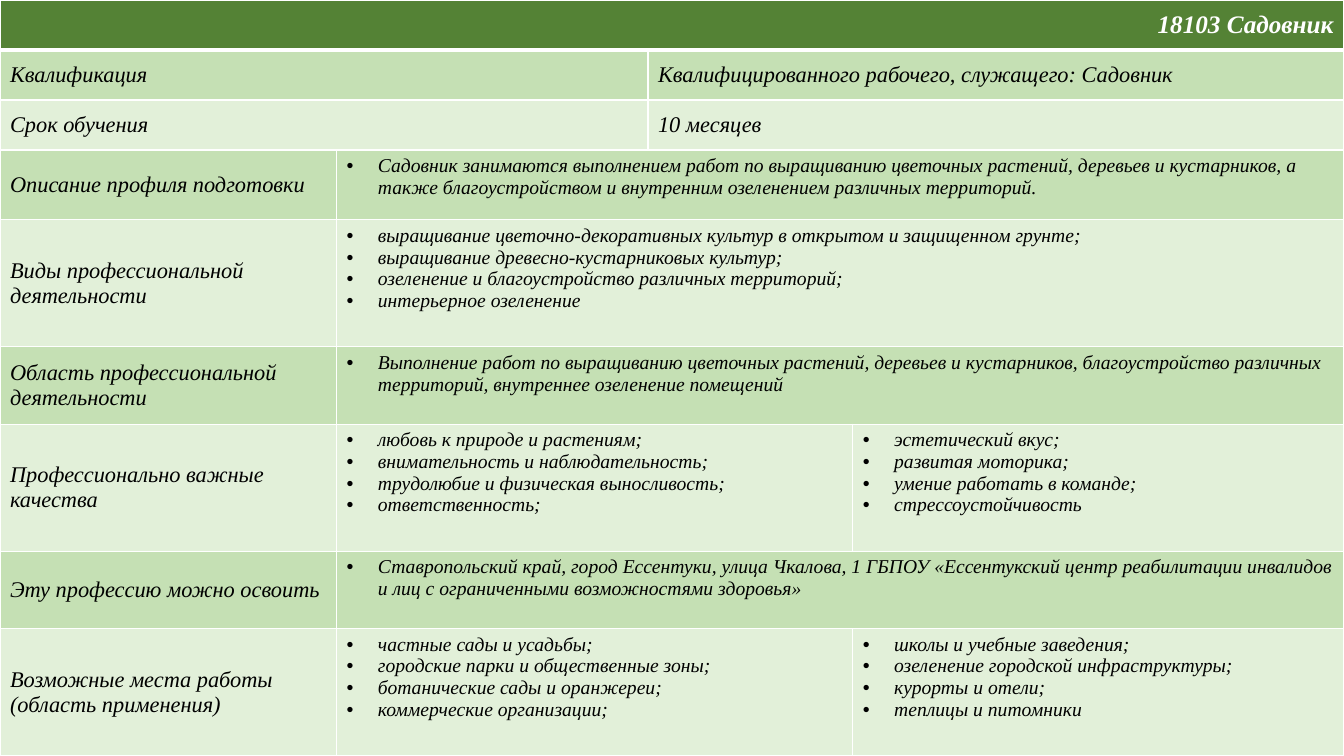
import pptx
import pptx.util
import pptx.dml.color
import pptx.enum.text
from lxml import etree
from pptx.util import Cm, Pt

FONT = "Times New Roman"
HEADER, DARK, LIGHT = "548235", "C5E0B4", "E2F0D9"
WHITE, BLACK = "FFFFFF", "000000"
COLS = [8.48, 7.85, 5.16, 12.37]
ROWS = [1.26, 1.26, 1.26, 1.76, 3.2, 1.95, 3.2, 1.95, 3.2]
INDENT = 0.79

# Each row maps its starting columns to a label (string) or a bulleted list.
CONTENT = [
    {0: "18103 Садовник"},
    {0: "Квалификация", 2: "Квалифицированного рабочего, служащего: Садовник"},
    {0: "Срок обучения", 2: "10 месяцев"},
    {0: "Описание профиля подготовки",
     1: ["Садовник занимаются выполнением работ по выращиванию цветочных растений, "
         "деревьев и кустарников, а также благоустройством и внутренним озеленением "
         "различных территорий."]},
    {0: "Виды профессиональной деятельности",
     1: ["выращивание цветочно-декоративных культур в открытом и защищенном грунте;",
         "выращивание древесно-кустарниковых культур;",
         "озеленение и благоустройство различных территорий;",
         "интерьерное озеленение"]},
    {0: "Область профессиональной деятельности",
     1: ["Выполнение работ по выращиванию цветочных растений, деревьев и кустарников, "
         "благоустройство различных территорий, внутреннее озеленение помещений"]},
    {0: "Профессионально важные качества",
     1: ["любовь к природе и растениям;", "внимательность и наблюдательность;",
         "трудолюбие и физическая выносливость;", "ответственность;"],
     3: ["эстетический вкус;", "развитая моторика;",
         "умение работать в команде;", "стрессоустойчивость"]},
    {0: "Эту профессию можно освоить",
     1: ["Ставропольский край, город Ессентуки, улица Чкалова, 1 ГБПОУ «Ессентукский "
         "центр реабилитации инвалидов и лиц с ограниченными возможностями здоровья»"]},
    {0: "Возможные места работы (область применения)",
     1: ["частные сады и усадьбы;", "городские парки и общественные зоны;",
         "ботанические сады и оранжереи;", "коммерческие организации;"],
     3: ["школы и учебные заведения;", "озеленение городской инфраструктуры;",
         "курорты и отели;", "теплицы и питомники"]},
]


def rgb(value):
    return pptx.dml.color.RGBColor.from_string(value)


def sub(parent, tag, **attrs):
    """Append a DrawingML element."""
    return etree.SubElement(parent, pptx.oxml.ns.qn("a:" + tag), **attrs)


def paint(cell, row):
    """Draw the cell borders, then its fill, in schema order."""
    tcPr = cell._tc.get_or_add_tcPr()
    for side in "LRTB":
        thick = (row, side) in ((0, "B"), (1, "T"))
        ln = sub(tcPr, "ln" + side, w=str(Pt(3 if thick else 1)))
        sub(sub(ln, "solidFill"), "srgbClr", val=WHITE)
    cell.fill.solid()
    color = HEADER if row == 0 else DARK if row % 2 else LIGHT
    cell.fill.fore_color.rgb = rgb(color)


def write(cell, content, header):
    bulleted = isinstance(content, list)
    if not bulleted:
        cell.vertical_anchor = pptx.enum.text.MSO_ANCHOR.MIDDLE
    tf = cell.text_frame
    for i, text in enumerate(content if bulleted else [content]):
        p = tf.add_paragraph() if i else tf.paragraphs[0]
        if bulleted:
            pPr = p._p.get_or_add_pPr()
            pPr.set("marL", str(Cm(INDENT)))
            pPr.set("indent", str(-Cm(INDENT)))
            sub(pPr, "buFont", typeface="Arial")
            sub(pPr, "buChar", char="•")
        if header:
            p.alignment = pptx.enum.text.PP_ALIGN.RIGHT
        r = p.add_run()
        r.text = text
        r.font.name = FONT
        r.font.size = Pt(18 if header else 14 if bulleted else 16)
        r.font.bold = header
        r.font.italic = True
        r.font.color.rgb = rgb(WHITE if header else BLACK)


def main():
    prs = pptx.Presentation()
    prs.slide_width, prs.slide_height = Cm(33.87), Cm(19.05)
    s = prs.slides.add_slide(prs.slide_layouts[6])
    table = s.shapes.add_table(len(ROWS), len(COLS), 0, 0,
                               Cm(sum(COLS)), Cm(sum(ROWS))).table
    table.first_row = table.horz_banding = False
    for column, width in zip(table.columns, COLS):
        column.width = Cm(width)
    for row, (height, cells) in enumerate(zip(ROWS, CONTENT)):
        table.rows[row].height = Cm(height)
        for col in range(len(COLS)):
            paint(table.cell(row, col), row)
        starts = list(cells)
        for start, end in zip(starts, starts[1:] + [len(COLS)]):
            cell = table.cell(row, start)
            if end - start > 1:
                cell.merge(table.cell(row, end - 1))
            write(cell, cells[start], header=row == 0)
    prs.save("out.pptx")


if __name__ == "__main__":
    main()
